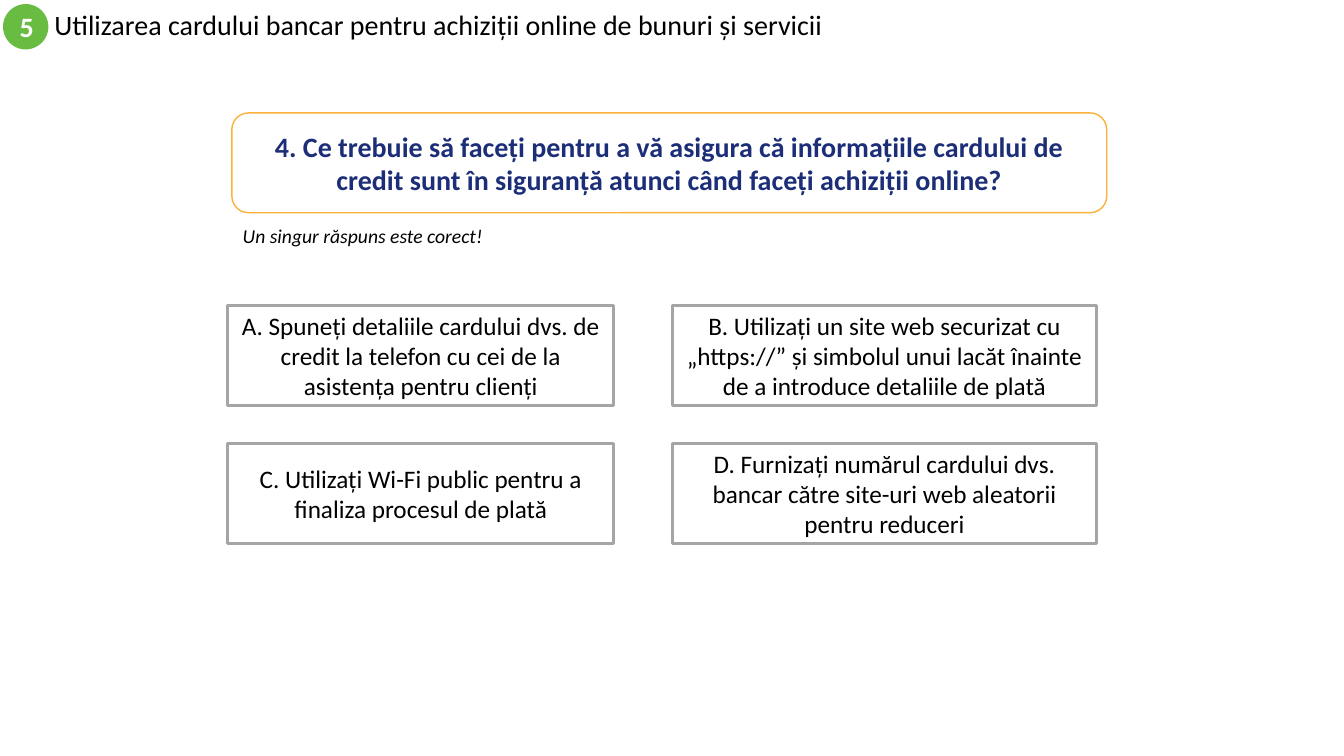
import pptx
import pptx.util
import pptx.dml.color
import pptx.enum.shapes
import pptx.enum.text

Pt = pptx.util.Pt
Kind = pptx.enum.shapes.MSO_SHAPE
Align = pptx.enum.text.PP_ALIGN
Anchor = pptx.enum.text.MSO_ANCHOR

HEAD = "Utilizarea cardului bancar pentru achiziții online de bunuri și servicii"
BADGE = "5"
QUERY = ("4. Ce trebuie să faceți pentru a vă asigura că informațiile cardului de "
         "credit sunt în siguranță atunci când faceți achiziții online?")
HINT = "Un singur răspuns este corect!"
CHOICES = [
    ["A. Spuneți detaliile cardului dvs. de credit la telefon cu cei de la "
     "asistența pentru clienți",
     "B. Utilizați un site web securizat cu „https://” și simbolul unui lacăt "
     "înainte de a introduce detaliile de plată"],
    ["C. Utilizați Wi-Fi public pentru a finaliza procesul de plată",
     "D. Furnizați numărul cardului dvs. bancar către site-uri web aleatorii "
     "pentru reduceri"],
]
COLORS = {"white": "FFFFFF", "black": "000000", "green": "68BC42",
          "amber": "FCB13A", "navy": "1C2E78", "gray": "A5A5A5"}
COLUMNS = [(162.72, 275.76), (480.24, 303.12)]
TOP, STEP, TALL = 218.16, 98.64, 71.28


def color(name):
    return pptx.dml.color.RGBColor.from_string(COLORS[name])


def write(shape, text, size, ink="black", bold=False, slant=False,
          align=Align.CENTER, anchor=Anchor.MIDDLE):
    frame = shape.text_frame
    frame.word_wrap = True
    frame.auto_size = pptx.enum.text.MSO_AUTO_SIZE.NONE
    frame.vertical_anchor = anchor
    frame.margin_left = frame.margin_right = Pt(7.2)
    frame.margin_top = frame.margin_bottom = Pt(3.6)
    para = frame.paragraphs[0]
    para.alignment = align
    run = para.add_run()
    run.text = text
    font = run.font
    font.name, font.size = "Calibri", Pt(size)
    font.bold, font.italic = bold, slant
    font.color.rgb = color(ink)
    return para


def draw(slide, kind, box, fill, line=None, width=0):
    shape = slide.shapes.add_shape(kind, *map(Pt, box))
    shape.shadow.inherit = False
    shape.fill.solid()
    shape.fill.fore_color.rgb = color(fill)
    if line:
        shape.line.color.rgb = color(line)
        shape.line.width = Pt(width)
    else:
        shape.line.fill.background()
    return shape


def main():
    deck = pptx.Presentation()
    deck.slide_width, deck.slide_height = Pt(960), Pt(540)
    slide = deck.slides.add_slide(deck.slide_layouts[5])

    title = slide.shapes.title
    title.left, title.top, title.width, title.height = map(Pt, (31.68, 2.88, 576, 32.4))
    para = write(title, HEAD, 20, align=Align.LEFT)
    para.line_spacing = 0.9

    badge = draw(slide, Kind.OVAL, (2.16, 2.88, 32.4, 32.4), "green")
    write(badge, BADGE, 20, "white", bold=True)

    query = draw(slide, Kind.ROUNDED_RECTANGLE, (165.6, 80.64, 624.96, TALL),
                 "white", "amber", 1)
    write(query, QUERY, 20, "navy", bold=True)

    hint = slide.shapes.add_textbox(*map(Pt, (166.32, 156.24, 187.2, 24.48)))
    write(hint, HINT, 14, slant=True, align=Align.LEFT, anchor=Anchor.TOP)

    for row, texts in enumerate(CHOICES):
        for (left, width), text in zip(COLUMNS, texts):
            box = (left, TOP + row * STEP, width, TALL)
            card = draw(slide, Kind.RECTANGLE, box, "white", "gray", 2)
            write(card, text, 18)

    deck.save("out.pptx")


if __name__ == "__main__":
    main()
